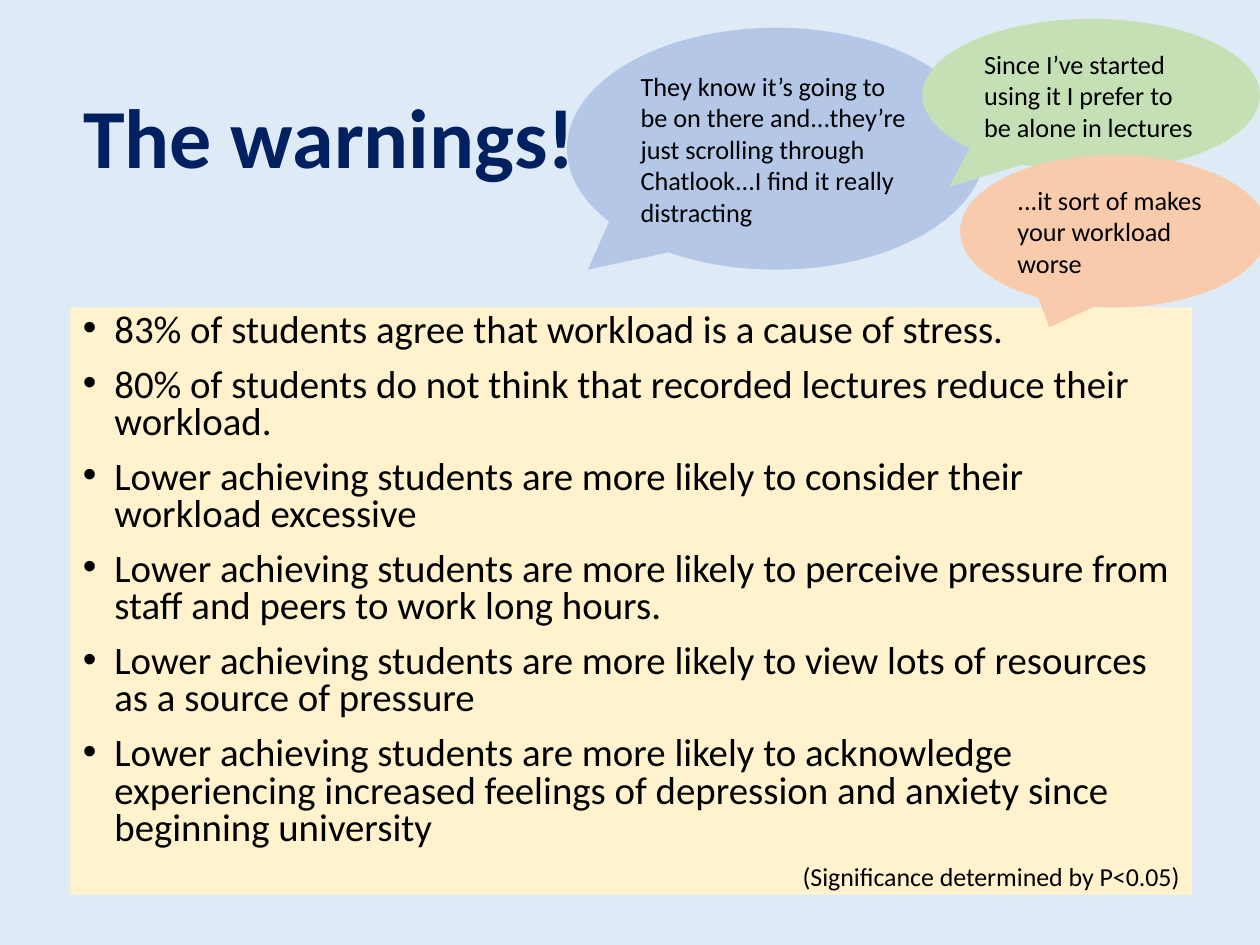
from lxml import etree
from pptx import Presentation
from pptx.dml.color import RGBColor
from pptx.enum import shapes, text
from pptx.oxml import ns
from pptx.util import Inches, Pt

SKY = RGBColor(0xDE, 0xEB, 0xF7)
NAVY = RGBColor(0x00, 0x20, 0x60)
BLACK = RGBColor(0x00, 0x00, 0x00)
CREAM = RGBColor(0xFF, 0xF2, 0xCC)
BLUE = RGBColor(0xB4, 0xC7, 0xE7)
GREEN = RGBColor(0xC5, 0xE0, 0xB4)
PEACH = RGBColor(0xF8, 0xCB, 0xAD)

POINTS = [
    "83% of students agree that workload is a cause of stress.",
    "80% of students do not think that recorded lectures reduce their workload.",
    "Lower achieving students are more likely to consider their workload excessive",
    "Lower achieving students are more likely to perceive pressure from staff and peers to work long hours.",
    "Lower achieving students are more likely to view lots of resources as a source of pressure",
    "Lower achieving students are more likely to acknowledge experiencing increased feelings of "
    "depression and anxiety since beginning university",
]
NOTE = "(Significance determined by P<0.05)"

# left, top, width, height, tail x, tail y, fill, words
QUOTES = [
    (4.5, 0.22, 3.32, 1.92, -0.45, 0.5, BLUE,
     "They know it’s going to be on there and...they’re just scrolling through "
     "Chatlook...I find it really distracting"),
    (7.32, 0.15, 2.68, 1.21, -0.42, 0.6, GREEN,
     "Since I’ve started using it I prefer to be alone in lectures"),
    (7.62, 1.23, 2.44, 1.21, -0.21, 0.63, PEACH,
     "...it sort of makes your workload worse"),
]


def style(para, size, color=BLACK, bold=False, align=text.PP_ALIGN.LEFT):
    para.font.name = "Calibri"
    para.font.size = Pt(size)
    para.font.color.rgb = color
    para.font.bold = bold
    para.alignment = align


def bullet(para):
    props = para._p.get_or_add_pPr()
    props.set("marL", str(Inches(0.25)))
    props.set("indent", str(Inches(-0.25)))
    font = etree.Element(ns.qn("a:buFont"), typeface="Arial")
    mark = etree.Element(ns.qn("a:buChar"), char="•")
    at = props.index(props.find(ns.qn("a:defRPr")))
    props[at:at] = [font, mark]


prs = Presentation()
prs.slide_width, prs.slide_height = Inches(10), Inches(7.5)
slide = prs.slides.add_slide(prs.slide_layouts[5])
slide.background.fill.solid()
slide.background.fill.fore_color.rgb = SKY

title = slide.shapes.title
title.left, title.top = Inches(0.56), Inches(0.4)
title.width, title.height = Inches(8.76), Inches(1.45)
frame = title.text_frame
frame.text = "The warnings!"
frame.auto_size = text.MSO_AUTO_SIZE.NONE
frame.vertical_anchor = text.MSO_ANCHOR.MIDDLE
style(frame.paragraphs[0], 48, NAVY, True)
frame.paragraphs[0].line_spacing = 0.9

body = slide.shapes.add_textbox(Inches(0.56), Inches(2.44), Inches(8.9), Inches(4.66))
body.fill.solid()
body.fill.fore_color.rgb = CREAM
frame = body.text_frame
frame.word_wrap = True
frame.text = "\n".join(POINTS + [NOTE])
*items, note = frame.paragraphs
for para in frame.paragraphs:
    para.line_spacing = 0.8
    para.space_before = Pt(10)
for para in items:
    style(para, 22.2)
    bullet(para)
style(note, 14.8, align=text.PP_ALIGN.RIGHT)

for left, top, wide, high, tail_x, tail_y, fill, words in QUOTES:
    quote = slide.shapes.add_shape(
        shapes.MSO_SHAPE.OVAL_CALLOUT, Inches(left), Inches(top), Inches(wide), Inches(high))
    quote.adjustments[0], quote.adjustments[1] = tail_x, tail_y
    quote.shadow.inherit = False
    quote.fill.solid()
    quote.fill.fore_color.rgb = fill
    quote.line.fill.background()
    frame = quote.text_frame
    frame.word_wrap = True
    frame.vertical_anchor = text.MSO_ANCHOR.MIDDLE
    frame.text = words
    style(frame.paragraphs[0], 15)

prs.save("out.pptx")
